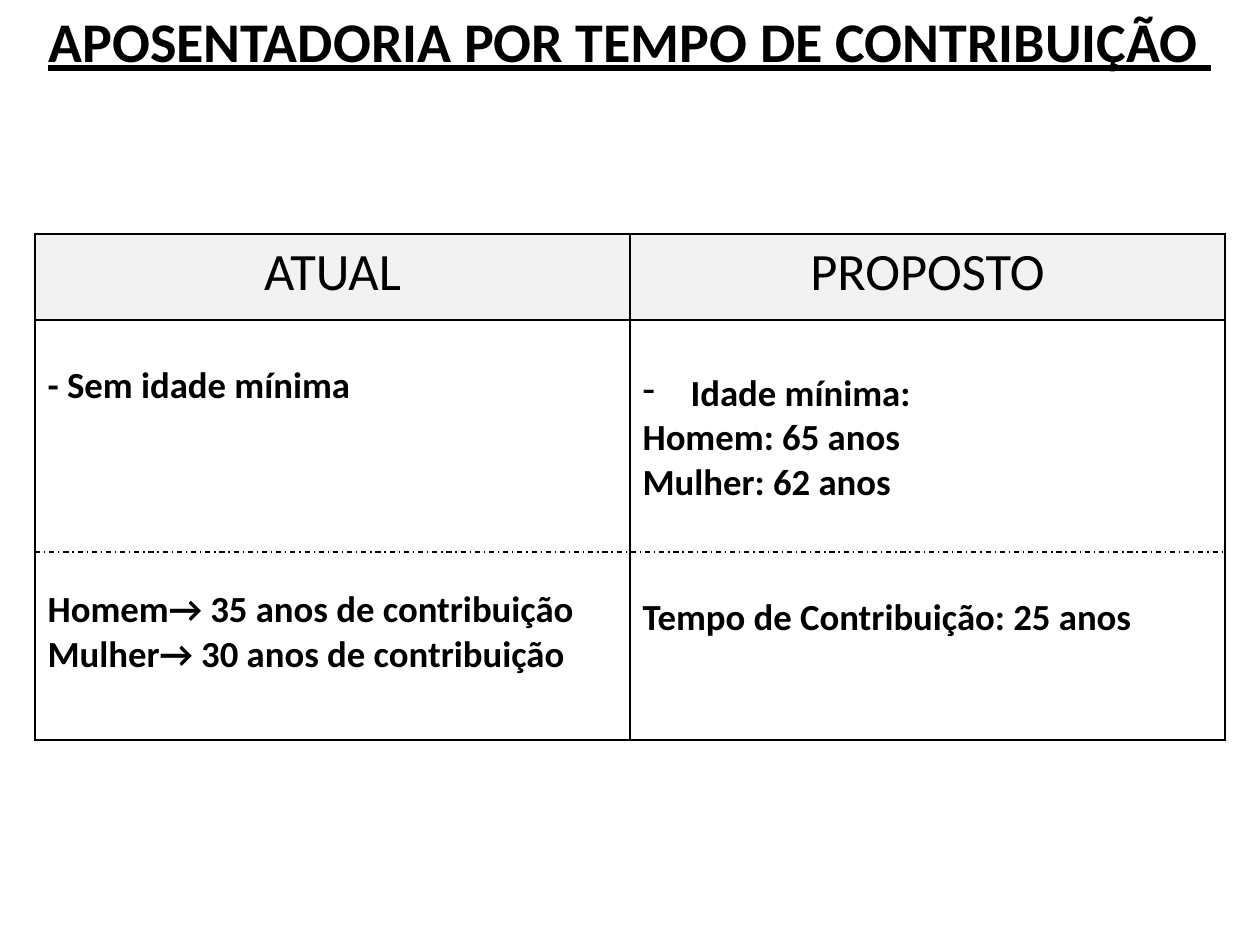
from lxml import etree
from pptx import Presentation, util as u
from pptx.dml.color import RGBColor
from pptx.enum import dml, shapes, text
from pptx.oxml import parse_xml
from pptx.oxml.ns import nsdecls, qn

PX = 914400 / 126
BLACK = RGBColor(0x00, 0x00, 0x00)
HEADER_GRAY = RGBColor(0xF2, 0xF2, 0xF2)
FONT = "Calibri"
LEFT, TOP, COLUMN = 35, 234, 595
ROWS = [86, 420]
DIVIDER = 552


def px(length):
    return u.Emu(round(length * PX))


def style(para, size, bold=False):
    para.font.name = FONT
    para.font.size = u.Pt(size)
    para.font.bold = bold
    para.font.color.rgb = BLACK


deck = Presentation()
deck.slide_width, deck.slide_height = px(1260), px(945)
page = deck.slides.add_slide(deck.slide_layouts[5])

title = page.shapes.title
title.left, title.top, title.width, title.height = px(0), px(0), px(1260), px(929)
frame = title.text_frame
frame.text = "APOSENTADORIA POR TEMPO DE CONTRIBUIÇÃO "
frame.word_wrap = True
frame.auto_size = text.MSO_AUTO_SIZE.NONE
frame.vertical_anchor = text.MSO_ANCHOR.TOP
heading = frame.paragraphs[0]
heading.alignment = text.PP_ALIGN.CENTER
style(heading, 32, True)
heading.font.underline = True

table = page.shapes.add_table(2, 2, px(LEFT), px(TOP), px(2 * COLUMN), px(sum(ROWS))).table
table.first_row = table.horz_banding = False
for column in table.columns:
    column.width = px(COLUMN)
for row, height in zip(table.rows, ROWS):
    row.height = px(height)

for cell, label in zip(table.rows[0].cells, ["ATUAL", "PROPOSTO"]):
    cell.text = label
    para = cell.text_frame.paragraphs[0]
    para.alignment = text.PP_ALIGN.CENTER
    style(para, 30)

contents = [
    (44, [("- Sem idade mínima", 0),
          ("Homem→ 35 anos de contribuição", 179),
          ("Mulher→ 30 anos de contribuição", 0)]),
    (51, [("Idade mínima:", 0),
          ("Homem: 65 anos", 0),
          ("Mulher: 62 anos", 0),
          ("Tempo de Contribuição: 25 anos", 90)]),
]
for cell, (margin, lines) in zip(table.rows[1].cells, contents):
    cell.margin_top = px(margin)
    cell.text = "\n".join(line for line, gap in lines)
    for para, (line, gap) in zip(cell.text_frame.paragraphs, lines):
        style(para, 21, True)
        para.space_before = px(gap)

bullet = table.cell(1, 1).text_frame.paragraphs[0]._p.get_or_add_pPr()
bullet.set("marL", str(px(48)))
bullet.set("indent", str(px(-48)))
bullet.find(qn("a:defRPr")).addprevious(parse_xml(f'<a:buChar {nsdecls("a")} char="-"/>'))

for cell in table.iter_cells():
    properties = cell._tc.get_or_add_tcPr()
    for side in ["lnL", "lnR", "lnT", "lnB"]:
        properties.append(parse_xml(
            f'<a:{side} {nsdecls("a")} w="12700"><a:solidFill>'
            f'<a:srgbClr val="{BLACK}"/></a:solidFill></a:{side}>'))
    cell.fill.background()
for cell in table.rows[0].cells:
    cell.fill.solid()
    cell.fill.fore_color.rgb = HEADER_GRAY

divider = page.shapes.add_connector(
    shapes.MSO_CONNECTOR.STRAIGHT, px(LEFT), px(DIVIDER), px(LEFT + 2 * COLUMN), px(DIVIDER))
divider.line.color.rgb = BLACK
divider.line.width = u.Pt(0.75)
divider.line.dash_style = dml.MSO_LINE.DASH_DOT
etree.SubElement(divider._element.spPr, qn("a:effectLst"))

deck.save("out.pptx")
